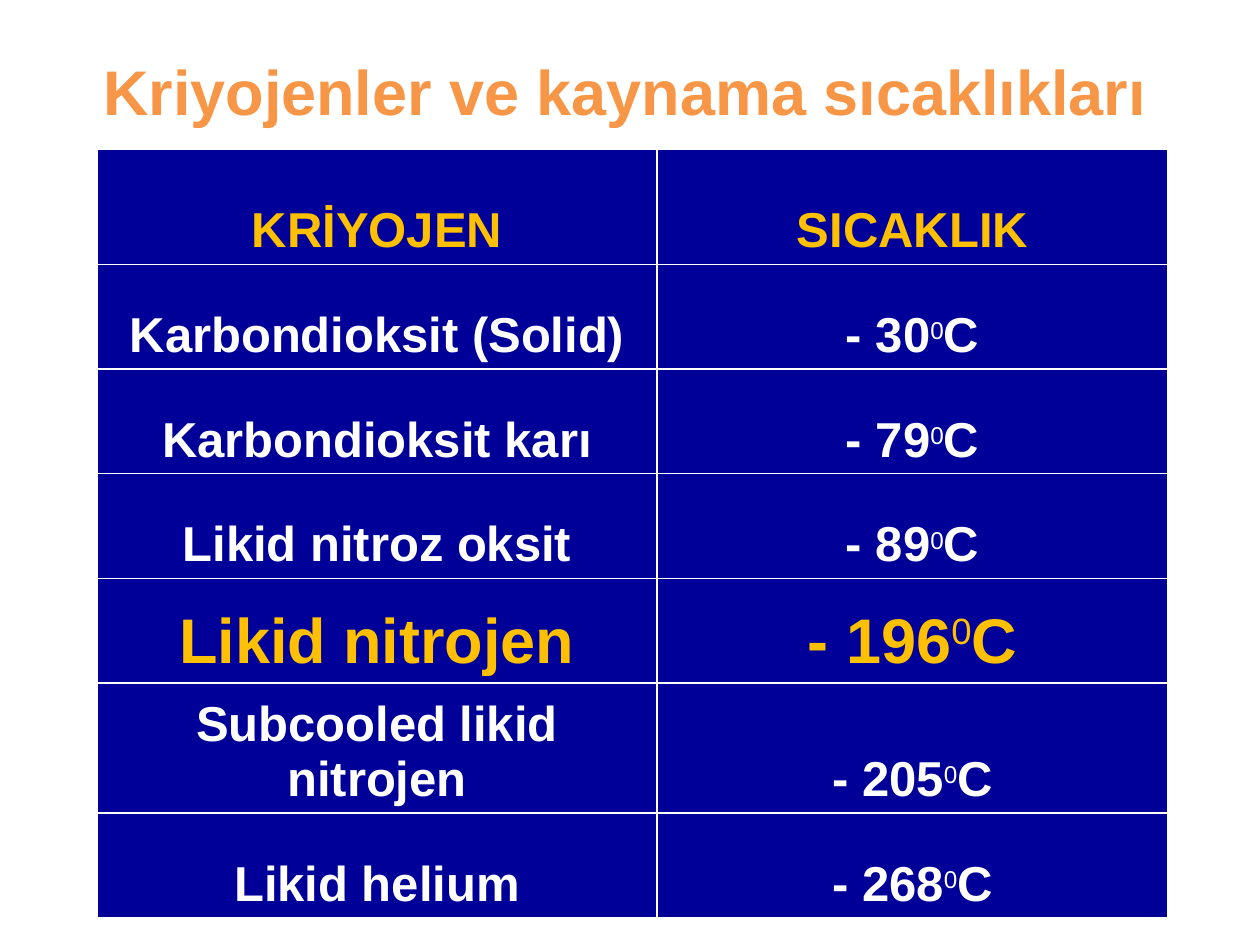
from pptx import Presentation
from pptx.dml.color import RGBColor
from pptx.enum.text import MSO_ANCHOR, MSO_AUTO_SIZE, PP_ALIGN
from pptx.oxml import parse_xml
from pptx.oxml.ns import nsdecls
from pptx.util import Cm, Pt

NAVY = RGBColor(0x00, 0x00, 0x99)
GOLD = RGBColor(0xFF, 0xC0, 0x00)
WHITE = RGBColor(0xFF, 0xFF, 0xFF)
ORANGE = RGBColor(0xF7, 0x96, 0x46)

FONT = "Arial"
DEGREE = "0"
# Name, temperature, text size, degree size, colour, row height in cm
ROWS = [
    ("KRİYOJEN", "SICAKLIK", 28, 24, GOLD, 2.33),
    ("Karbondioksit (Solid)", "- 30", 28, 24, WHITE, 2.11),
    ("Karbondioksit karı", "- 79", 28, 24, WHITE, 2.11),
    ("Likid nitroz oksit", "- 89", 28, 24, WHITE, 2.11),
    ("Likid nitrojen", "- 196", 36, 36, GOLD, 2.11),
    ("Subcooled likid nitrojen", "- 205", 28, 24, WHITE, 2.62),
    ("Likid helium", "- 268", 28, 24, WHITE, 2.11),
]
COLS = (11.28, 10.31)


def style(run, size, color, bold=True):
    font = run.font
    font.name, font.size, font.bold = FONT, Pt(size), bold
    font.color.rgb = color


def add_title(slide, left, top, width, height):
    box = slide.shapes.add_textbox(Cm(left), Cm(top), Cm(width), Cm(height))
    frame = box.text_frame
    frame.word_wrap = False
    frame.auto_size = MSO_AUTO_SIZE.SHAPE_TO_FIT_TEXT
    frame.text = "Kriyojenler ve kaynama sıcaklıkları"
    style(frame.paragraphs[0].runs[0], 36, ORANGE)


def add_borders(cell):
    props = cell._tc.get_or_add_tcPr()
    for index, side in enumerate(("lnL", "lnR", "lnT", "lnB")):
        props.insert(index, parse_xml(
            f'<a:{side} {nsdecls("a")} w="12700"><a:solidFill>'
            f'<a:srgbClr val="{WHITE}"/></a:solidFill></a:{side}>'))


def fill_cell(cell, text, size, small, color, degree):
    cell.fill.solid()
    cell.fill.fore_color.rgb = NAVY
    cell.vertical_anchor = MSO_ANCHOR.BOTTOM
    add_borders(cell)
    para = cell.text_frame.paragraphs[0]
    para.text = text
    para.alignment = PP_ALIGN.CENTER
    style(para.runs[0], size, color)
    if degree:
        # Raised degree mark, then the unit
        mark, unit = para.add_run(), para.add_run()
        mark.text, unit.text = DEGREE, "C"
        style(mark, small, color, bold=False)
        mark.font._element.set("baseline", "30000")
        style(unit, size, color)


def add_grid(slide, left, top):
    width, height = sum(COLS), sum(row[-1] for row in ROWS)
    table = slide.shapes.add_table(len(ROWS), len(COLS), Cm(left), Cm(top),
                                   Cm(width), Cm(height)).table
    for col, size in zip(table.columns, COLS):
        col.width = Cm(size)
    for index, (name, temp, size, small, color, high) in enumerate(ROWS):
        table.rows[index].height = Cm(high)
        fill_cell(table.cell(index, 0), name, size, small, color, False)
        fill_cell(table.cell(index, 1), temp, size, small, color, index > 0)


def main():
    deck = Presentation()
    deck.slide_width, deck.slide_height = Cm(25.4), Cm(19.05)
    slide = deck.slides.add_slide(deck.slide_layouts[6])
    add_grid(slide, 1.96, 3)
    add_title(slide, 1.83, 0.94, 21.74, 1.8)
    deck.save("out.pptx")


if __name__ == "__main__":
    main()
